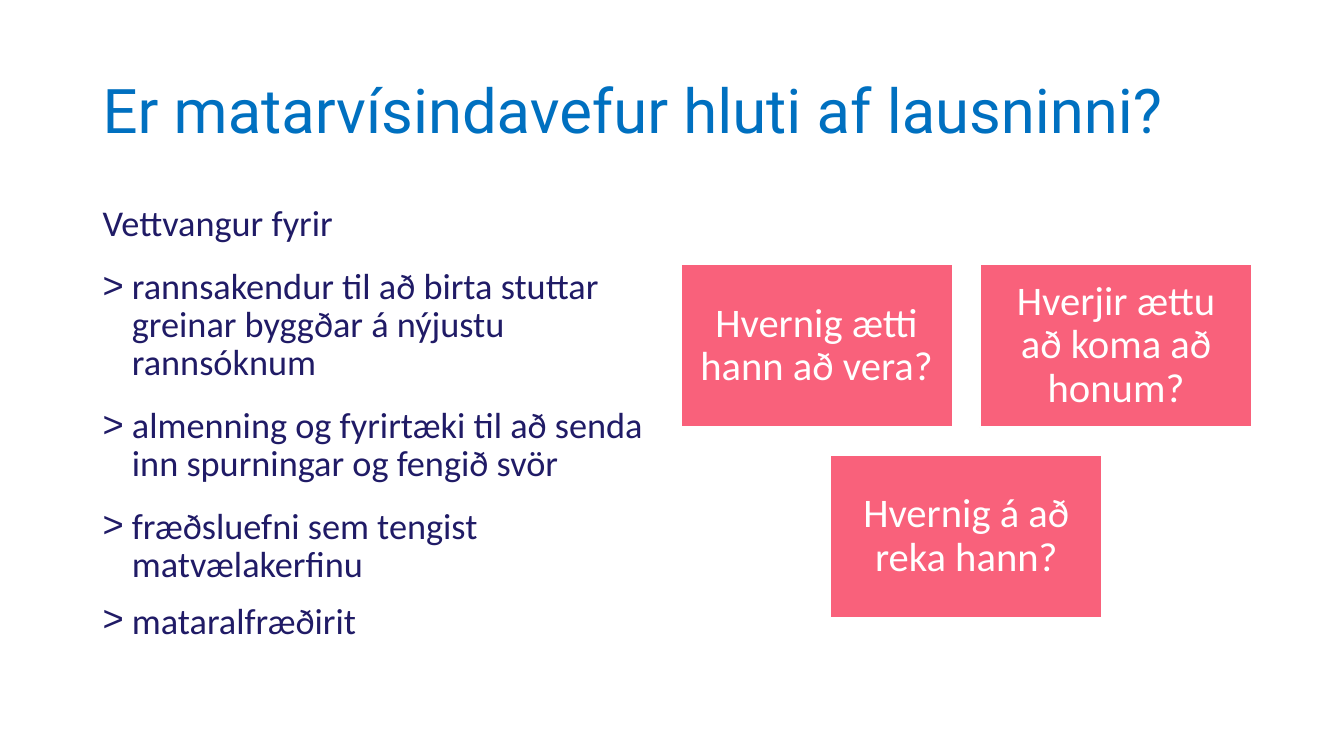
from lxml.etree import SubElement
from pptx import Presentation
from pptx.dml.color import RGBColor
from pptx.enum.shapes import MSO_SHAPE
from pptx.enum.text import MSO_ANCHOR, PP_ALIGN
from pptx.oxml.ns import qn
from pptx.util import Inches, Pt

TITLE = "Er matarvísindavefur hluti af lausninni?"
INTRO = "Vettvangur fyrir"
PURPOSES = [
    "rannsakendur til að birta stuttar greinar byggðar á nýjustu rannsóknum",
    "almenning og fyrirtæki til að senda inn spurningar og fengið svör",
    "fræðsluefni sem tengist matvælakerfinu",
    "mataralfræðirit",
]
QUESTIONS = [
    "Hvernig ætti hann að vera?",
    "Hverjir ættu að koma að honum?",
    "Hvernig á að reka hann?",
]


def color(value):
    """Return the colour for a hex string."""
    return RGBColor.from_string(value)


def add_bullet(para, mark, indent):
    """Give a paragraph a hanging bullet."""
    properties = para._p.get_or_add_pPr()
    properties.set("marL", str(Inches(indent)))
    properties.set("indent", str(-Inches(indent)))
    SubElement(properties, qn("a:buFont")).set("typeface", "Arial")
    SubElement(properties, qn("a:buChar")).set("char", mark)


def write(para, text, size, fill, font="Calibri", align=PP_ALIGN.LEFT,
          spacing=0.9, before=0, after=0, bullet=None):
    """Fill a paragraph with formatted text."""
    if bullet:
        add_bullet(para, bullet, 0.29)
    para.alignment = align
    para.line_spacing = spacing
    para.space_before = Pt(before)
    para.space_after = Pt(after)
    span = para.add_run()
    span.text = text
    span.font.name = font
    span.font.size = Pt(size)
    span.font.color.rgb = color(fill)


def add_frame(page, left, top, width, height, anchor=MSO_ANCHOR.TOP):
    """Add a wrapping text box and return its text frame."""
    box = page.shapes.add_textbox(
        Inches(left), Inches(top), Inches(width), Inches(height))
    frame = box.text_frame
    frame.word_wrap = True
    frame.vertical_anchor = anchor
    return frame


def add_title(page, left, top, width, height):
    """Place the slide title."""
    frame = add_frame(page, left, top, width, height, MSO_ANCHOR.MIDDLE)
    write(frame.paragraphs[0], TITLE, 44, "0070C0", font="Roboto")


def add_purposes(page, left, top, width, height):
    """Place the introduction and its bulleted purposes."""
    frame = add_frame(page, left, top, width, height)
    write(frame.paragraphs[0], INTRO, 25.9, "201B66",
          align=PP_ALIGN.JUSTIFY, spacing=0.87, after=8)
    for purpose in PURPOSES:
        last = purpose == PURPOSES[-1]
        write(frame.add_paragraph(), purpose, 25.9, "201B66", bullet=">",
              spacing=0.7 if last else 0.87, before=10, after=0 if last else 8)


def add_card(page, text, left, top, width, height):
    """Place one question card."""
    card = page.shapes.add_shape(
        MSO_SHAPE.RECTANGLE, Inches(left), Inches(top),
        Inches(width), Inches(height))
    card.shadow.inherit = False
    card.fill.solid()
    card.fill.fore_color.rgb = color("F9617B")
    card.line.color.rgb = color("FFFFFF")
    card.line.width = Pt(1.5)
    frame = card.text_frame
    frame.word_wrap = True
    frame.vertical_anchor = MSO_ANCHOR.MIDDLE
    frame.margin_left = frame.margin_right = Inches(0.12)
    frame.margin_top = frame.margin_bottom = Inches(0.12)
    write(frame.paragraphs[0], text, 29, "FFFFFF", align=PP_ALIGN.CENTER)


def add_questions(page, left, top, width, height):
    """Place the question cards in centred rows of two."""
    gap, columns = 0.27, 2
    rows = [QUESTIONS[start:start + columns]
            for start in range(0, len(QUESTIONS), columns)]
    card_width = (width - gap * (columns - 1)) / columns
    card_height = (height - gap * (len(rows) - 1)) / len(rows)
    for row, questions in enumerate(rows):
        row_width = len(questions) * (card_width + gap) - gap
        row_left = left + (width - row_width) / 2
        for column, question in enumerate(questions):
            add_card(page, question, row_left + column * (card_width + gap),
                     top + row * (card_height + gap), card_width, card_height)


def main():
    """Build the slide and save the deck."""
    deck = Presentation()
    deck.slide_width = Inches(13.33)
    deck.slide_height = Inches(7.5)
    page = deck.slides.add_slide(deck.slide_layouts[6])
    add_title(page, 0.92, 0.4, 11.5, 1.45)
    add_purposes(page, 0.92, 2, 5.67, 4.76)
    add_questions(page, 6.75, 2.62, 5.67, 3.51)
    deck.save("out.pptx")


if __name__ == "__main__":
    main()
